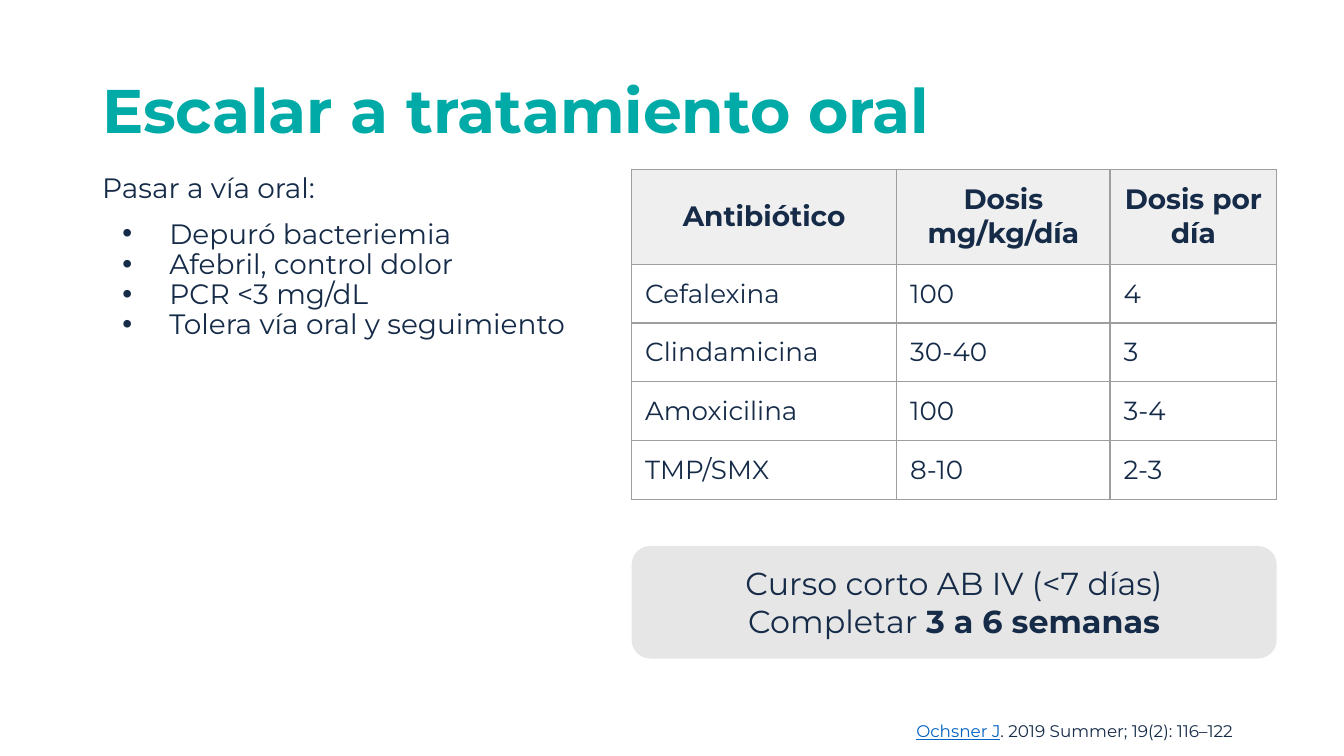
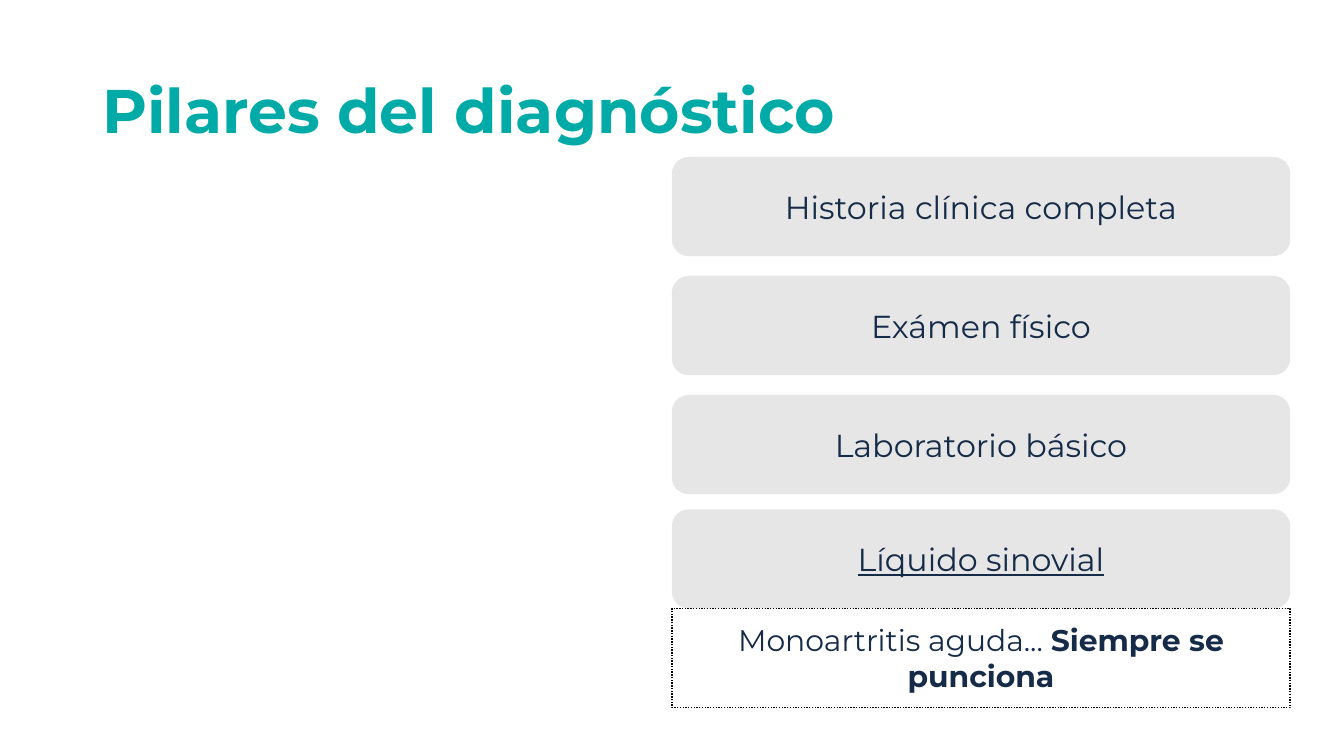
"""Build two slides on oral treatment and the pillars of diagnosis."""
from dataclasses import dataclass

import lxml.etree
import pptx
import pptx.dml.color
import pptx.enum.dml
import pptx.enum.shapes
import pptx.enum.text
import pptx.oxml.ns
import pptx.util

Pt = pptx.util.Pt
qn = pptx.oxml.ns.qn
ALIGN = pptx.enum.text.PP_ALIGN
ANCHOR = pptx.enum.text.MSO_ANCHOR
SHAPE = pptx.enum.shapes.MSO_SHAPE


@dataclass(frozen=True)
class Theme:
    font: str = "Montserrat"
    accent: str = "00AAA7"
    ink: str = "152B48"
    link: str = "0563C1"
    card: str = "E7E6E6"
    header: str = "EFEFEF"
    border: str = "9E9E9E"
    outline: str = "000000"
    title_size: float = 33
    card_size: float = 17
    note_size: float = 16
    body_size: float = 15
    cell_size: float = 14
    source_size: float = 9
    line_width: float = 0.75
    inset: float = 7.2


def rgb(value):
    return pptx.dml.color.RGBColor.from_string(value)


def add_child(parent, tag, **attrs):
    return lxml.etree.SubElement(parent, qn(tag), attrs)


class Deck:
    def __init__(self, theme):
        self.t = theme
        self.prs = pptx.Presentation()
        self.prs.slide_width, self.prs.slide_height = Pt(720), Pt(405)
        self.s = None

    def slide(self, layout, title):
        self.s = self.prs.slides.add_slide(self.prs.slide_layouts[layout])
        sp = self.s.shapes.title
        self.place(sp, 49.7, 21.6, 620.6, 78.5)
        tf = self.frame(sp.text_frame, ANCHOR.MIDDLE, 5.04, 2.88)
        p = self.add_runs(tf.paragraphs[0], [(title, {"b": True})],
                          self.t.title_size, color=self.t.accent)
        p.line_spacing = 0.9

    def place(self, sp, *box):
        sp.left, sp.top, sp.width, sp.height = map(Pt, box)

    def frame(self, tf, anchor=ANCHOR.TOP, x=None, y=None):
        x = self.t.inset if x is None else x
        y = self.t.inset if y is None else y
        tf.word_wrap = True
        tf.auto_size = pptx.enum.text.MSO_AUTO_SIZE.NONE
        tf.vertical_anchor = anchor
        tf.margin_left = tf.margin_right = Pt(x)
        tf.margin_top = tf.margin_bottom = Pt(y)
        return tf

    def add_runs(self, p, runs, size, align=ALIGN.LEFT, color=None):
        p.alignment = align
        for text, style in runs:
            r = p.add_run()
            r.text = text
            r.font.name = self.t.font
            r.font.size = Pt(size)
            r.font.bold = style.get("b", False)
            r.font.underline = style.get("u", False)
            r.font.color.rgb = rgb(style.get("c", color or self.t.ink))
        return p

    def paragraphs(self, tf, lines, size, align=ALIGN.LEFT):
        for i, runs in enumerate(lines):
            p = tf.add_paragraph() if i else tf.paragraphs[0]
            self.add_runs(p, runs, size, align)

    def body(self, box, intro, items):
        sp = self.s.placeholders[1]
        self.place(sp, *box)
        tf = self.frame(sp.text_frame, x=5.04, y=2.88)
        lines = [[(text, {})] for text in [intro, *items]]
        self.paragraphs(tf, lines, self.t.body_size)
        for i, p in enumerate(tf.paragraphs):
            p.line_spacing = 0.9
            p.space_before = Pt(8 if i == 1 else 0)
            pPr = p._p.get_or_add_pPr()
            pPr.set("marL", str(Pt(36 if i else 0)))
            pPr.set("indent", str(Pt(-25.2 if i else 0)))
            if i:
                add_child(add_child(pPr, "a:buClr"), "a:srgbClr", val=self.t.ink)
                add_child(pPr, "a:buChar", char="•")
            else:
                add_child(pPr, "a:buNone")

    def shape(self, kind, box, lines, size, anchor):
        sp = self.s.shapes.add_shape(kind, *map(Pt, box))
        sp.shadow.inherit = False
        self.paragraphs(self.frame(sp.text_frame, anchor), lines, size, ALIGN.CENTER)
        return sp

    def card(self, box, lines):
        sp = self.shape(SHAPE.ROUNDED_RECTANGLE, box, lines,
                        self.t.card_size, ANCHOR.MIDDLE)
        sp.fill.solid()
        sp.fill.fore_color.rgb = rgb(self.t.card)
        sp.line.fill.background()

    def note(self, box, runs):
        sp = self.shape(SHAPE.RECTANGLE, box, [runs], self.t.note_size, ANCHOR.TOP)
        sp.fill.background()
        sp.line.color.rgb = rgb(self.t.outline)
        sp.line.width = Pt(self.t.line_width)
        sp.line.dash_style = pptx.enum.dml.MSO_LINE.ROUND_DOT

    def source(self, box, runs):
        sp = self.s.shapes.add_textbox(*map(Pt, box))
        tf = self.frame(sp.text_frame)
        self.add_runs(tf.paragraphs[0], runs, self.t.source_size).line_spacing = 1.15

    def borders(self, cell):
        tcPr = cell._tc.get_or_add_tcPr()
        for side in ("a:lnL", "a:lnR", "a:lnT", "a:lnB"):
            ln = add_child(tcPr, side, w=str(Pt(self.t.line_width)))
            add_child(add_child(ln, "a:solidFill"), "a:srgbClr", val=self.t.border)

    def cell(self, cell, text, is_header):
        self.borders(cell)
        cell.margin_left = cell.margin_right = Pt(self.t.inset)
        cell.margin_top = cell.margin_bottom = Pt(self.t.inset)
        cell.vertical_anchor = ANCHOR.MIDDLE if is_header else ANCHOR.TOP
        if is_header:
            cell.fill.solid()
            cell.fill.fore_color.rgb = rgb(self.t.header)
        else:
            cell.fill.background()
        self.add_runs(cell.text_frame.paragraphs[0], [(text, {"b": is_header})],
                      self.t.body_size if is_header else self.t.cell_size,
                      ALIGN.CENTER if is_header else ALIGN.LEFT)

    def table(self, left, top, widths, heights, rows):
        box = (left, top, sum(widths), sum(heights))
        tbl = self.s.shapes.add_table(len(rows), len(widths), *map(Pt, box)).table
        tbl.first_row = tbl.horz_banding = False
        for col, width in zip(tbl.columns, widths):
            col.width = Pt(width)
        for i, (row, height) in enumerate(zip(rows, heights)):
            tbl.rows[i].height = Pt(height)
            for j, text in enumerate(row):
                self.cell(tbl.cell(i, j), text, i == 0)


def oral_treatment(deck):
    deck.slide(1, "Escalar a tratamiento oral")
    deck.body((49.7, 90.7, 265, 121.7), "Pasar a vía oral:", [
        "Depuró bacteriemia",
        "Afebril, control dolor",
        "PCR <3 mg/dL",
        "Tolera vía oral y seguimiento",
    ])
    deck.table(338.4, 90.7, (142, 114.3, 89.3), [50.4] + [31.4] * 4, [
        ("Antibiótico", "Dosis mg/kg/día", "Dosis por día"),
        ("Cefalexina", "100", "4"),
        ("Clindamicina", "30-40", "3"),
        ("Amoxicilina", "100", "3-4"),
        ("TMP/SMX", "8-10", "2-3"),
    ])
    deck.card((338.4, 292.5, 345.6, 60.3), [
        [("Curso corto AB IV (<7 días)", {})],
        [("Completar ", {}), ("3 a 6 semanas", {"b": True})],
    ])
    deck.source((483.8, 377.3, 236.2, 27.4), [
        ("Ochsner J", {"c": deck.t.link, "u": True}),
        (". 2019 Summer; 19(2): 116–122", {}),
    ])


def diagnosis_pillars(deck):
    deck.slide(5, "Pilares del diagnóstico")
    left, top, width, height, pitch = 360, 84.1, 331.2, 53.1, 63.75
    pillars = ["Historia clínica completa", "Exámen físico", "Laboratorio básico"]
    for i, text in enumerate(pillars):
        deck.card((left, top + i * pitch, width, height), [[(text, {})]])
    note_top = 326
    deck.card((left, note_top - height, width, height),
              [[("Líquido sinovial", {"u": True})]])
    deck.note((left, note_top, width, height), [
        ("Monoartritis aguda... ", {}),
        ("Siempre se punciona", {"b": True}),
    ])


def main():
    deck = Deck(Theme())
    oral_treatment(deck)
    diagnosis_pillars(deck)
    deck.prs.save("out.pptx")


if __name__ == "__main__":
    main()
